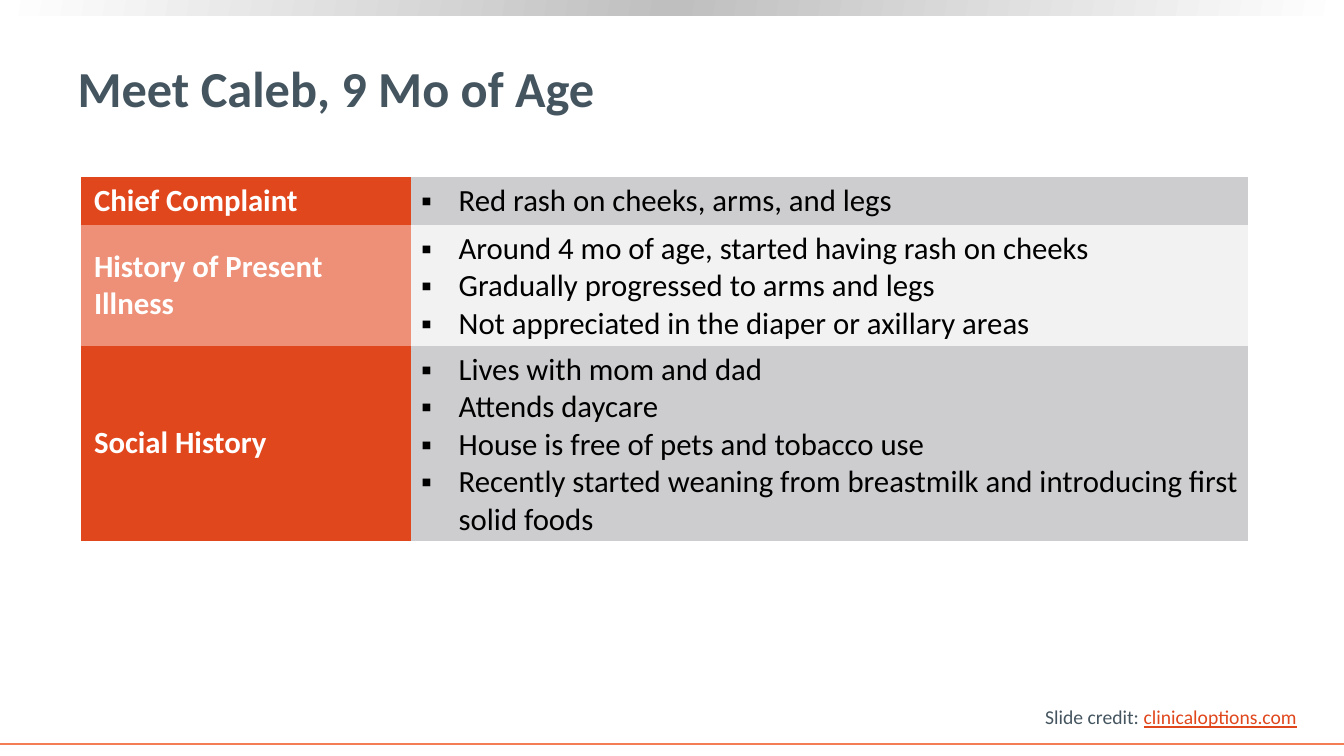
import copy

import pptx
import pptx.dml.color
import pptx.enum.shapes
import pptx.enum.text
import pptx.oxml
import pptx.oxml.ns
import pptx.util
from pptx.dml.color import RGBColor
from pptx.util import Cm

WHITE = RGBColor(0xFF, 0xFF, 0xFF)
BLACK = RGBColor(0x00, 0x00, 0x00)
SILVER = RGBColor(0xBF, 0xBF, 0xBF)
SLATE = RGBColor(0x45, 0x55, 0x60)
ORANGE = RGBColor(0xE1, 0x47, 0x1D)
LIGHT_ORANGE = RGBColor(0xF4, 0x7D, 0x55)
SALMON = RGBColor(0xED, 0x90, 0x77)
GRAY = RGBColor(0xCD, 0xCD, 0xCF)
PALE_GRAY = RGBColor(0xF2, 0xF2, 0xF2)

SLIDE_WIDTH = Cm(33.87)
SLIDE_HEIGHT = Cm(19.05)
PLAIN_TABLE_STYLE = "{2D5ABB26-0587-4C30-8999-92F81FD0307C}"

CASE_HISTORY = [
    ("Chief Complaint", ["Red rash on cheeks, arms, and legs"], Cm(1.18)),
    ("History of Present Illness", [
        "Around 4 mo of age, started having rash on cheeks",
        "Gradually progressed to arms and legs",
        "Not appreciated in the diaper or axillary areas",
    ], Cm(3.05)),
    ("Social History", [
        "Lives with mom and dad",
        "Attends daycare",
        "House is free of pets and tobacco use",
        "Recently started weaning from breastmilk and introducing first solid foods",
    ], Cm(4.91)),
]


def write(paragraph, text, size, color, bold=False, underline=False, font="Calibri"):
    """Append a formatted run to a left-aligned paragraph."""
    paragraph.alignment = pptx.enum.text.PP_ALIGN.LEFT
    run = paragraph.add_run()
    run.text = text
    run.font.name = font
    run.font.size = pptx.util.Pt(size)
    run.font.bold = bold
    run.font.underline = underline
    run.font.color.rgb = color


def add_bullet(paragraph, indent=Cm(0.95)):
    """Give a paragraph a square bullet with a hanging indent."""
    properties = paragraph._p.get_or_add_pPr()
    properties.set("marL", str(indent))
    properties.set("indent", str(-indent))
    namespace = pptx.oxml.ns.nsdecls("a")
    properties.append(pptx.oxml.parse_xml(f'<a:buFont {namespace} typeface="Arial"/>'))
    properties.append(pptx.oxml.parse_xml(f'<a:buChar {namespace} char="▪"/>'))


class CaseSlide:
    """Hold the text style and the current slide."""

    title_size = 36
    table_size = 22
    credit_size = 14

    def __init__(self, presentation):
        """Add a title-only slide."""
        self.slide = presentation.slides.add_slide(presentation.slide_layouts[5])

    def band(self, height):
        """Draw the gradient band along the top edge."""
        shape = self.slide.shapes.add_shape(
            pptx.enum.shapes.MSO_SHAPE.RECTANGLE, 0, 0, SLIDE_WIDTH, height)
        shape.shadow.inherit = False
        shape.line.fill.background()
        shape.fill.gradient()
        shape.fill.gradient_angle = 170
        stop_list = shape._element.spPr.find(".//" + pptx.oxml.ns.qn("a:gsLst"))
        stop_list.insert(1, copy.deepcopy(stop_list[0]))
        colors = [WHITE, SILVER, WHITE]
        for index, stop in enumerate(shape.fill.gradient_stops):
            stop.position = index / 2
            stop.color.rgb = colors[index]

    def rule(self, top):
        """Draw the line across the foot of the slide."""
        connector = self.slide.shapes.add_connector(
            pptx.enum.shapes.MSO_CONNECTOR.STRAIGHT, 0, top, SLIDE_WIDTH, top)
        connector.line.color.rgb = LIGHT_ORANGE
        connector.line.width = pptx.util.Pt(1.5)
        connector._element.spPr.append(
            pptx.oxml.parse_xml(f'<a:effectLst {pptx.oxml.ns.nsdecls("a")}/>'))

    def title(self, text, left, top, width, height):
        """Place and fill the title placeholder."""
        shape = self.slide.shapes.title
        shape.left, shape.top, shape.width, shape.height = left, top, width, height
        frame = shape.text_frame
        frame.auto_size = pptx.enum.text.MSO_AUTO_SIZE.NONE
        frame.vertical_anchor = pptx.enum.text.MSO_ANCHOR.MIDDLE
        write(frame.paragraphs[0], text, self.title_size, SLATE, bold=True)

    def credit(self, label, address, left, top, width, height):
        """Add the credit line with its underlined address."""
        frame = self.slide.shapes.add_textbox(left, top, width, height).text_frame
        frame.word_wrap = False
        paragraph = frame.paragraphs[0]
        write(paragraph, label, self.credit_size, SLATE)
        write(paragraph, address, self.credit_size, ORANGE, underline=True)

    def cell(self, cell, texts, fill, color, margin, bold=False, bullets=False):
        """Fill one table cell with paragraphs."""
        cell.fill.solid()
        cell.fill.fore_color.rgb = fill
        cell.margin_left = cell.margin_right = margin
        cell.margin_top = cell.margin_bottom = Cm(0.13)
        cell.vertical_anchor = pptx.enum.text.MSO_ANCHOR.MIDDLE
        frame = cell.text_frame
        for index, text in enumerate(texts):
            paragraph = frame.add_paragraph() if index else frame.paragraphs[0]
            if bullets:
                add_bullet(paragraph)
            write(paragraph, text, self.table_size, color, bold=bold)

    def table(self, rows, left, top, widths):
        """Add a table of headings and bulleted findings with alternating fills."""
        height = sum(row_height for _, _, row_height in rows)
        table = self.slide.shapes.add_table(
            len(rows), len(widths), left, top, sum(widths), height).table
        table.first_row = table.horz_banding = False
        table._tbl.tblPr.find(pptx.oxml.ns.qn("a:tableStyleId")).text = PLAIN_TABLE_STYLE
        for column, width in zip(table.columns, widths):
            column.width = width
        for index, (heading, findings, row_height) in enumerate(rows):
            table.rows[index].height = row_height
            heading_fill, findings_fill = (
                (SALMON, PALE_GRAY) if index % 2 else (ORANGE, GRAY))
            self.cell(table.cell(index, 0), [heading], heading_fill, WHITE,
                      Cm(0.34), bold=True)
            self.cell(table.cell(index, 1), findings, findings_fill, BLACK,
                      Cm(0.25), bullets=True)


def main():
    """Build and save the case slide."""
    presentation = pptx.Presentation()
    presentation.slide_width = SLIDE_WIDTH
    presentation.slide_height = SLIDE_HEIGHT
    case = CaseSlide(presentation)
    case.band(Cm(0.4))
    case.rule(Cm(18.75))
    case.credit("Slide credit: ", "clinicaloptions.com",
                Cm(26.09), Cm(17.65), Cm(6.9), Cm(0.86))
    case.table(CASE_HISTORY, Cm(2.03), Cm(4.47), [Cm(8.33), Cm(21.1)])
    case.title("Meet Caleb, 9 Mo of Age", Cm(1.7), Cm(0.66), Cm(30.2), Cm(3.07))
    presentation.save("out.pptx")


if __name__ == "__main__":
    main()
